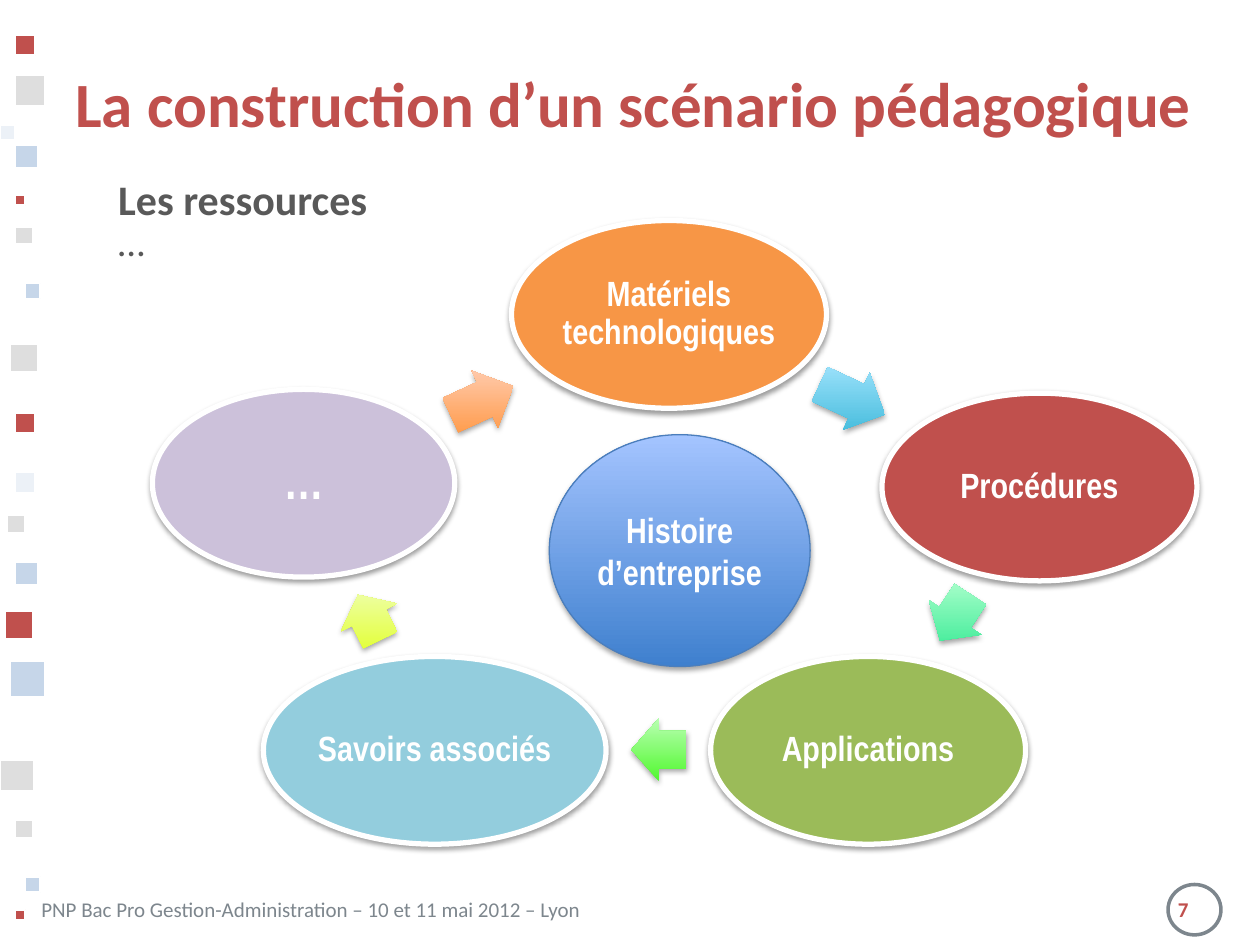
import pptx
import pptx.util
import pptx.dml.color
import pptx.enum.shapes
import pptx.enum.text
import pptx.oxml
import pptx.oxml.ns

PX = 9144  # EMU per px, 100 px to the inch
COLOURS = {
    "white": "FFFFFF", "red": "C0504D", "text": "595959", "footer": "7D868D",
    "grey": "BFBFBF", "blue": "B8CCE4", "pale": "DBE5F1", "outline": "4B7EBC",
    "orange": "F79646", "green": "9BBB59", "aqua": "93CDDD", "lilac": "CCC1DA",
    "core dark": "3F80CE", "core light": "A4C4FF",
    "sky dark": "39B7D8", "sky light": "A7E6FF",
    "mint dark": "33E992", "mint light": "ADFFCD",
    "lime dark": "51F82F", "lime light": "B9FFB2",
    "yellow dark": "E2FF33", "yellow light": "F0FFB8",
    "peach dark": "FF953E", "peach light": "FFD2BD",
}
SHAPE = pptx.enum.shapes.MSO_SHAPE
ANCHOR = pptx.enum.text.MSO_ANCHOR
ALIGN = pptx.enum.text.PP_ALIGN


def rgb(name):
    return pptx.dml.color.RGBColor.from_string(COLOURS[name])


def add_xml(parent, body):
    head, rest = body.split(" ", 1)
    ns = pptx.oxml.ns.nsdecls("a")
    parent.append(pptx.oxml.parse_xml(f"{head} {ns} {rest}"))


class SlideBuilder:
    heading_font = "Calibri"
    cycle_font = "Arial Narrow"

    def __init__(self, slide):
        self.slide = slide
        self.shapes = slide.shapes

    def open_group(self):
        self.shapes = self.slide.shapes.add_group_shape().shapes

    def close_group(self):
        self.shapes = self.slide.shapes

    def shape(self, kind, box, fill=None, alpha=100, line=None, width=1):
        item = self.shapes.add_shape(kind, *(v * PX for v in box))
        item.shadow.inherit = False
        if fill is None:
            item.fill.background()
        else:
            item.fill.solid()
            item.fill.fore_color.rgb = rgb(fill)
            if alpha < 100:
                colour = item.fill._xPr.find(".//" + pptx.oxml.ns.qn("a:srgbClr"))
                add_xml(colour, f'<a:alpha val="{alpha * 1000}"/>')
        if line is None:
            item.line.fill.background()
        else:
            item.line.color.rgb = rgb(line)
            item.line.width = pptx.util.Pt(width)
        return item

    def gradient(self, item, hue):
        """Dark at the bottom, light at the top, whatever the rotation."""
        item.fill.gradient()
        item.fill.gradient_angle = 90
        for stop, tone in zip(item.fill.gradient_stops, ("dark", "light")):
            stop.color.rgb = rgb(f"{hue} {tone}")
        properties = item._element.spPr
        properties.find(pptx.oxml.ns.qn("a:gradFill")).set("rotWithShape", "0")

    def shadow(self, item, alpha, distance):
        effects = item._element.spPr.find(pptx.oxml.ns.qn("a:effectLst"))
        add_xml(effects, f'<a:outerShdw blurRad="39370" dist="{int(distance * 12700)}" '
                         'dir="5400000" rotWithShape="0"><a:srgbClr val="000000">'
                         f'<a:alpha val="{alpha * 1000}"/></a:srgbClr></a:outerShdw>')

    def run(self, paragraph, text, size, colour, bold=False, font=heading_font):
        run = paragraph.add_run()
        run.text = text
        run.font.size = pptx.util.Pt(size)
        run.font.name = font
        run.font.bold = bold
        run.font.color.rgb = rgb(colour)

    def text_box(self, box, anchor=ANCHOR.TOP, wrap=True):
        frame = self.shapes.add_textbox(*(v * PX for v in box)).text_frame
        frame.word_wrap = wrap
        frame.vertical_anchor = anchor
        return frame.paragraphs[0]

    def label(self, item, text, size, inset, spacing):
        frame = item.text_frame
        frame.word_wrap = True
        frame.vertical_anchor = ANCHOR.MIDDLE
        frame.margin_left = frame.margin_right = inset * PX
        frame.margin_top = frame.margin_bottom = inset * PX
        paragraph = frame.paragraphs[0]
        paragraph.alignment = ALIGN.CENTER
        paragraph.line_spacing = spacing
        self.run(paragraph, text, size, "white", True, self.cycle_font)

    def square(self, box, fill, alpha):
        self.shape(SHAPE.RECTANGLE, box, fill, alpha, "white")

    def node(self, box, fill, text, size=20):
        oval = self.shape(SHAPE.OVAL, box, fill, line="white", width=3)
        self.shadow(oval, 38, 1.6)
        self.label(oval, text, size, 3, 0.9)

    def arrow(self, box, rotation, hue):
        arrow = self.shape(SHAPE.RIGHT_ARROW, box)
        arrow.adjustments[0], arrow.adjustments[1] = 0.6, 0.5
        arrow.rotation = rotation
        self.gradient(arrow, hue)
        self.shadow(arrow, 35, 1.8)

    def core(self, box, text):
        oval = self.shape(SHAPE.OVAL, box, line="outline", width=0.75)
        self.gradient(oval, "core")
        self.shadow(oval, 35, 1.8)
        self.label(oval, text, 20, 0, 1.0)


# Left, top, width, height of the margin squares, by colour and opacity
MARGIN_SQUARES = {
    ("blue", 80): [(8, 525, 28, 28), (12, 115, 18, 18), (20, 225, 12, 12),
                   (12, 446, 18, 18), (20, 696, 12, 12)],
    ("pale", 50): [(0, 99, 12, 12), (12, 375, 16, 16)],
    ("grey", 50): [(0, 603, 27, 25), (12, 180, 14, 14), (8, 273, 22, 22),
                   (12, 60, 24, 24), (6, 409, 14, 14), (12, 651, 14, 14)],
    ("red", 100): [(12, 328, 16, 16), (4, 485, 22, 22), (12, 28, 16, 16),
                   (12, 722, 8, 8), (12, 155, 8, 8)],
}
# Each resource, followed by the arrow that leads to the next one
CYCLE = [
    ((406, 175, 250, 149), "orange", "Matériels technologiques", 20,
     (648, 292, 57, 50), 25, "sky"),
    ((700, 312, 250, 149), "red", "Procédures", 20,
     (736, 465, 44, 50), 123.2, "mint"),
    ((564, 521, 250, 149), "green", "Applications", 20,
     (501, 570, 44, 50), 180, "lime"),
    ((209, 521, 272, 149), "aqua", "Savoirs associés", 20,
     (273, 465, 40, 50), 243.9, "yellow"),
    ((121, 309, 240, 149), "lilac", "…", 28,
     (355, 293, 55, 50), 335.3, "peach"),
]


def main():
    deck = pptx.Presentation()
    deck.slide_width, deck.slide_height = 1000 * PX, 750 * PX
    page = SlideBuilder(deck.slides.add_slide(deck.slide_layouts[6]))

    # Footer and page number
    footer = page.text_box((23, 707, 958, 30))
    add_xml(footer._p.get_or_add_pPr(),
            f'<a:tabLst ><a:tab pos="{902 * PX}" algn="l"/></a:tabLst>')
    page.run(footer, "PNP Bac Pro Gestion-Administration – 10 et 11 mai 2012 – Lyon \t",
             12, "footer")
    page.run(footer, "7", 12, "red", True)
    page.shape(SHAPE.OVAL, (927, 702, 42, 40), line="footer", width=2)

    # Squares in the left margin
    page.open_group()
    for (colour, alpha), boxes in MARGIN_SQUARES.items():
        for box in boxes:
            page.square(box, colour, alpha)
    page.close_group()

    # Body and title
    body = page.text_box((84, 175, 866, 495))
    body.line_spacing = 0.8
    body.space_before = pptx.util.Pt(4.4)
    page.run(body, "…", 22, "text")
    title = page.text_box((50, 30, 950, 103), ANCHOR.MIDDLE)
    page.run(title, "La construction d’un scénario pédagogique", 36, "red", True)

    # Cycle of resources
    page.open_group()
    for oval_box, fill, text, size, arrow_box, rotation, hue in CYCLE:
        page.node(oval_box, fill, text, size)
        page.arrow(arrow_box, rotation, hue)
    page.close_group()

    # Centre and subtitle
    page.core((436, 345, 207, 184), "Histoire d’entreprise")
    subtitle = page.text_box((84, 133, 220, 50), wrap=False)
    page.run(subtitle, "Les ressources", 24, "text", True)

    deck.save("out.pptx")


if __name__ == "__main__":
    main()
